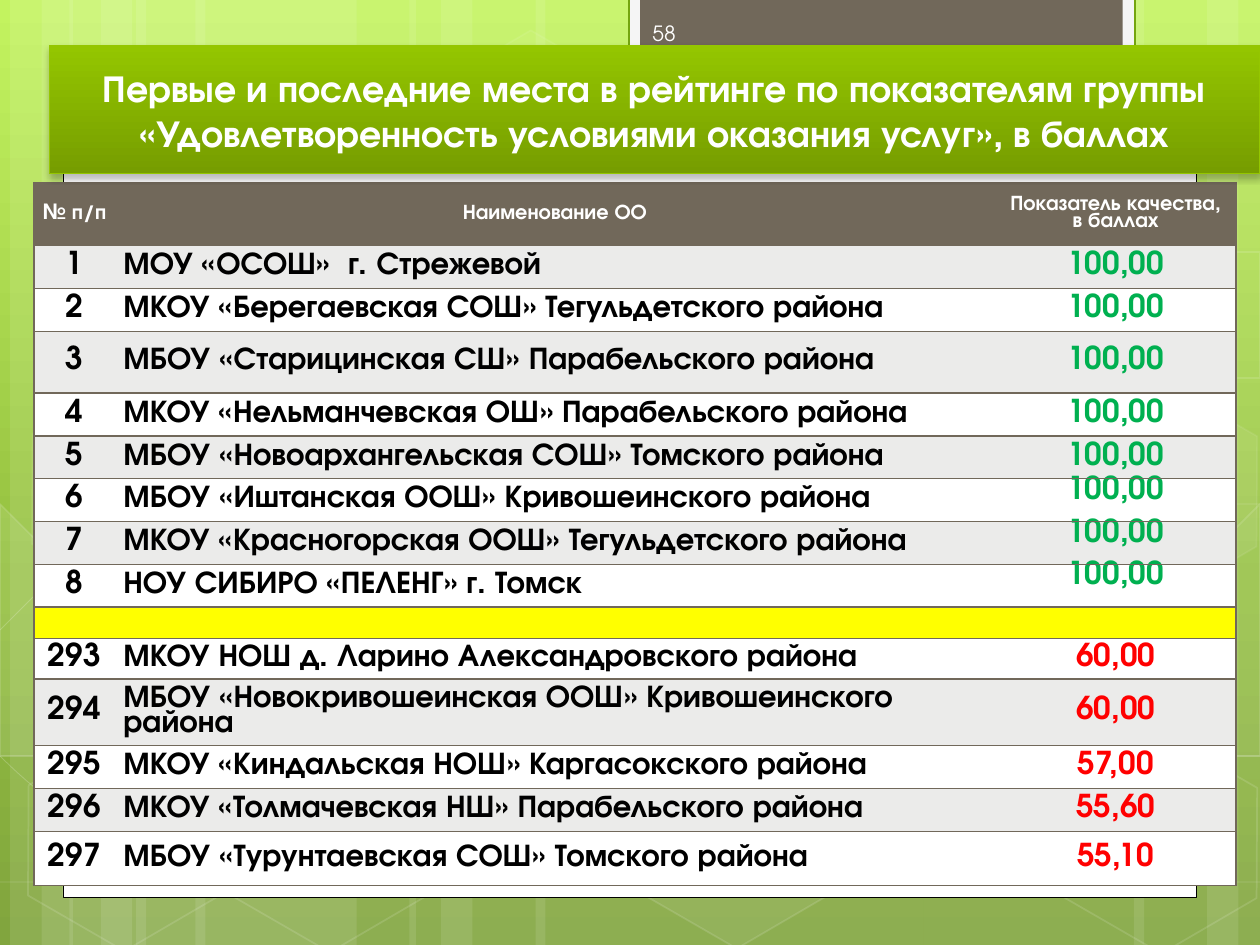
from copy import deepcopy

from lxml.etree import SubElement
from pptx import Presentation
from pptx.dml.color import RGBColor
from pptx.enum.shapes import MSO_SHAPE
from pptx.enum.text import MSO_ANCHOR, MSO_AUTO_SIZE, PP_ALIGN
from pptx.oxml import parse_xml
from pptx.oxml.ns import nsdecls, qn
from pptx.util import Inches, Pt

FONT = "TeX Gyre Adventor"
WHITE = RGBColor(0xFF, 0xFF, 0xFF)
BLACK = RGBColor(0, 0, 0)
BROWN = RGBColor(0x71, 0x68, 0x5A)
BAND = RGBColor(0xEB, 0xEB, 0xEA)
YELLOW = RGBColor(0xFF, 0xFF, 0)
GREEN = RGBColor(0, 0xB0, 0x50)
RED = RGBColor(0xFF, 0, 0)
LIME = RGBColor(0x94, 0xC6, 0)
DARK_LIME = RGBColor(0x76, 0x9D, 0)
TAB_EDGE = RGBColor(0x74, 0xA5, 0x10)
TAB_FILL = RGBColor(0xF5, 0xF5, 0xF5)
NUMBER_COLOR = RGBColor(0xFE, 0xFE, 0xFE)
BACKDROP = [RGBColor(0xC3, 0xF3, 0x5F), RGBColor(0x93, 0xBF, 0x3F), RGBColor(0x81, 0xA5, 0x3E)]


def paint(shape, fill=None, fill_alpha=100, line=None, width=1, line_alpha=100):
    """Set fill and outline, with opacity in percent; None means no paint."""
    shape.shadow.inherit = False
    for paint_format, color, alpha in ((shape.fill, fill, fill_alpha),
                                       (shape.line.fill, line, line_alpha)):
        if color is None:
            paint_format.background()
            continue
        paint_format.solid()
        paint_format.fore_color.rgb = color
        if alpha < 100:
            for srgb in paint_format._xPr.find(qn("a:solidFill")):
                SubElement(srgb, qn("a:alpha"), val=str(alpha * 1000))
    if line is not None:
        shape.line.width = Pt(width)


def add_text(frame, text, size, color, bold=True):
    run = frame.paragraphs[0].add_run()
    run.text = text
    run.font.name = FONT
    run.font.size = Pt(size)
    run.font.bold = bold
    run.font.color.rgb = color


prs = Presentation()
prs.slide_width, prs.slide_height = Inches(10), Inches(7.5)
slide = prs.slides.add_slide(prs.slide_layouts[5])
shapes = slide.shapes

backdrop = slide.background.fill
backdrop.gradient()
backdrop.gradient_angle = 270
stop_list = backdrop.gradient_stops[0]._gs.getparent()
stop_list.insert(1, deepcopy(stop_list[0]))
for stop, color, position in zip(backdrop.gradient_stops, BACKDROP, (0, 0.62, 1)):
    stop.color.rgb = color
    stop.position = position

# Pale vertical stripes
for left, width in [(1.08, 1.75), (0.08, 0.5), (0.33, 0.83), (1.55, 1.75), (0.55, 0.5), (0.8, 0.83),
                    (7.33, 1.75), (9.58, 0.5), (9, 0.83), (4.25, 3.08), (3.25, 0.5), (3.5, 0.83)]:
    stripe = shapes.add_shape(MSO_SHAPE.RECTANGLE, Inches(left), 0, Inches(width), Inches(7.5))
    paint(stripe, WHITE, 10)

# Sweeping lines: a start point, then Bezier segments of two handles and an end
sweeps = [
    [(0.07, 6.73), (0.61, 6.76), (1.15, 6.79), (1.9, 6.78), (2.65, 6.77), (3.58, 6.75), (4.58, 6.65),
     (5.58, 6.55), (7, 6.36), (7.92, 6.17), (8.83, 5.98), (9.77, 5.68), (10.07, 5.51)],
    [(0.07, 4.77), (0.36, 4.61), (0.65, 4.46), (1.21, 4.31), (1.78, 4.16), (2.59, 3.94), (3.47, 3.87),
     (4.36, 3.8), (5.44, 3.79), (6.54, 3.87), (7.64, 3.95), (9.47, 4.26), (10.07, 4.34)],
    [(0.06, 6.17), (1.27, 6.72), (2.47, 7.27), (3.34, 7.49)],
    [(0.07, 5.78), (0.38, 5.89), (0.7, 6), (1.28, 6.16), (1.86, 6.31), (2.73, 6.56), (3.57, 6.73),
     (4.4, 6.9), (5.45, 7.08), (6.28, 7.18), (7.11, 7.29), (8, 7.33), (8.53, 7.36),
     (9.05, 7.4), (9.19, 7.38), (9.45, 7.38), (9.71, 7.37), (9.89, 7.35), (10.07, 7.34)],
    [(2.42, 7.49), (2.6, 7.29), (2.78, 7.09), (3.02, 6.91), (3.26, 6.73), (3.6, 6.53), (3.88, 6.39),
     (4.16, 6.25), (4.33, 6.19), (4.7, 6.09), (5.06, 5.99), (5.73, 5.85), (6.08, 5.78),
     (6.44, 5.71), (6.49, 5.71), (6.8, 5.69), (7.11, 5.66), (7.6, 5.63), (7.94, 5.62),
     (8.29, 5.61), (8.86, 5.62), (8.86, 5.62), (9.08, 5.62), (9.3, 5.62), (9.53, 5.62),
     (9.71, 5.63), (9.88, 5.64), (9.97, 5.65), (10.06, 5.66), (10.03, 5.65), (10.06, 5.66)],
]
for sweep in sweeps:
    builder = shapes.build_freeform(*sweep[0], scale=Inches(1))
    builder.add_line_segments(sweep[1:], close=False)
    curve = builder.convert_to_shape()
    paint(curve, line=WHITE, width=0.5, line_alpha=20)
    # Turn every three straight segments into one Bezier segment
    segments = list(curve._element.iter(qn("a:lnTo")))
    outline = segments[0].getparent()
    for i in range(0, len(segments), 3):
        bezier = SubElement(outline, qn("a:cubicBezTo"))
        for segment in segments[i:i + 3]:
            bezier.append(segment[0])
            outline.remove(segment)

# Hexagons: left, top, fill opacity, line opacity
for left, top, fill_alpha, line_alpha in [
        (3.34, 0.36, 4, 8), (4.97, 5.89, 6, 12), (0.11, 5.91, 0, 12), (0.14, 3.12, 7, 8),
        (1.74, 5.92, 0, 12), (7.53, 4.53, 10, 12), (8.34, 5.93, 0, 12), (8.34, 3.14, 7, 8)]:
    hexagon = shapes.add_shape(MSO_SHAPE.HEXAGON, Inches(left), Inches(top), Inches(1.75), Inches(1.52))
    hexagon.rotation = 30
    hexagon.adjustments[0] = 0.285
    paint(hexagon, WHITE if fill_alpha else None, fill_alpha, WHITE, 1, line_alpha)

# Hexagons cut off by the slide edge
for corners, fill_alpha in [
        ([(0.08, 4.45), (0.19, 4.38), (0.96, 4.82), (0.95, 5.7), (0.2, 6.14), (0.08, 6.07)], 10),
        ([(9.26, 4.85), (10.01, 4.41), (10.09, 4.46), (10.09, 6.13), (10.02, 6.17), (9.26, 5.73)], 4),
        ([(9.26, 2.07), (10.01, 1.63), (10.1, 1.68), (10.09, 3.35), (10.02, 3.39), (9.26, 2.95)], 0)]:
    builder = shapes.build_freeform(*corners[0], scale=Inches(1))
    builder.add_line_segments(corners[1:])
    paint(builder.convert_to_shape(), WHITE if fill_alpha else None, fill_alpha, WHITE, 1, 12)

# White sheet and the page tab above it
for box, fill, line, width in [((0.5, 0.36, 9, 6.76), WHITE, BLACK, 0.5),
                               ((4.99, -0.02, 4.02, 0.76), TAB_FILL, TAB_EDGE, 1.25),
                               ((5.08, -0.02, 3.83, 0.68), BROWN, None, 0)]:
    panel = shapes.add_shape(MSO_SHAPE.RECTANGLE, *map(Inches, box))
    paint(panel, fill, line=line, width=width)

page_number = shapes.add_textbox(Inches(5.08), Inches(0.06), Inches(1.46), Inches(0.4)).text_frame
page_number.word_wrap = True
page_number.vertical_anchor = MSO_ANCHOR.MIDDLE
add_text(page_number, "58", 12, NUMBER_COLOR, bold=False)

# Ranking table
ranking = [
    ("№ п/п", "Наименование ОО", "Показатель качества, в баллах"),
    ("1", "МОУ «ОСОШ»  г. Стрежевой", "100,00"),
    ("2", "МКОУ «Берегаевская СОШ» Тегульдетского района", "100,00"),
    ("3", "МБОУ «Старицинская СШ» Парабельского района", "100,00"),
    ("4", "МКОУ «Нельманчевская ОШ» Парабельского района", "100,00"),
    ("5", "МБОУ «Новоархангельская СОШ» Томского района", "100,00"),
    ("6", "МБОУ «Иштанская ООШ» Кривошеинского района", "100,00"),
    ("7", "МКОУ «Красногорская ООШ» Тегульдетского района", "100,00"),
    ("8", "НОУ СИБИРО «ПЕЛЕНГ» г. Томск", "100,00"),
    ("", "", ""),
    ("293", "МКОУ НОШ д. Ларино Александровского района", "60,00"),
    ("294", "МБОУ «Новокривошеинская ООШ» Кривошеинского района", "60,00"),
    ("295", "МКОУ «Киндальская НОШ» Каргасокского района", "57,00"),
    ("296", "МКОУ «Толмачевская НШ» Парабельского района", "55,60"),
    ("297", "МБОУ «Турунтаевская СОШ» Томского района", "55,10"),
]
GAP_ROW = 9
row_heights = {0: 0.5, 3: 0.49, GAP_ROW: 0.25, 10: 0.32, 11: 0.53, 14: 0.43}
table = shapes.add_table(len(ranking), 3, Inches(0.27), Inches(1.45), Inches(9.54), Inches(5.7)).table
table.first_row = table.horz_banding = False
table._tbl.tblPr.find(qn("a:tableStyleId")).text = "{2D5ABB26-0587-4C30-8999-92F81FD0307C}"
for column, width in zip(table.columns, (0.64, 6.99, 1.91)):
    column.width = Inches(width)

for r, entries in enumerate(ranking):
    table.rows[r].height = Inches(row_heights.get(r, 0.34))
    for c, entry in enumerate(entries):
        cell = table.cell(r, c)
        cell.margin_left = cell.margin_right = Inches(0.07 if r and c else 0.06)
        cell.margin_top = cell.margin_bottom = 0
        cell.vertical_anchor = MSO_ANCHOR.TOP if c == 2 and r in (6, 7, 8) else MSO_ANCHOR.MIDDLE
        cell.fill.solid()
        cell.fill.fore_color.rgb = {0: BROWN, GAP_ROW: YELLOW}.get(r, BAND if r % 2 else WHITE)
        sides = ["L"] * (c == 0) + ["R"] * (c == 2) + ["T", "B"]
        for i, side in enumerate(sides):
            cell._tc.tcPr.insert(i, parse_xml(
                f'<a:ln{side} {nsdecls("a")} w="12700"><a:solidFill>'
                f'<a:srgbClr val="{BROWN}"/></a:solidFill></a:ln{side}>'))
        paragraph = cell.text_frame.paragraphs[0]
        if not entry:
            SubElement(paragraph._p, qn("a:endParaRPr"), sz="1200")
            continue
        cell.text_frame.auto_size = MSO_AUTO_SIZE.NONE
        paragraph.line_spacing = 0.88
        paragraph.alignment = PP_ALIGN.LEFT if r and c == 1 else PP_ALIGN.CENTER
        score_color = GREEN if r < GAP_ROW else RED
        color = WHITE if r == 0 else score_color if c == 2 else BLACK
        add_text(cell.text_frame, entry, 18 if r else 12, color)

# Title banner, in front of everything
title = shapes.title
title.left, title.top, title.width, title.height = map(Inches, (0.39, 0.36, 9.61, 1.02))
title.fill.gradient()
title.fill.gradient_angle = 270
for stop, color, position in zip(title.fill.gradient_stops, (LIME, DARK_LIME), (0, 1)):
    stop.color.rgb = color
    stop.position = position
title.line.color.rgb = LIME
title.line.width = Pt(0.75)
title._element.spPr.append(parse_xml(
    f'<a:effectLst {nsdecls("a")}><a:outerShdw blurRad="50800" dist="25400" dir="5400000">'
    '<a:srgbClr val="000000"><a:alpha val="28000"/></a:srgbClr></a:outerShdw></a:effectLst>'))
title.text_frame.word_wrap = True
title.text_frame.auto_size = MSO_AUTO_SIZE.NONE
title.text_frame.vertical_anchor = MSO_ANCHOR.MIDDLE
title.text_frame.paragraphs[0].alignment = PP_ALIGN.CENTER
add_text(title.text_frame, "Первые и последние места в рейтинге по показателям группы "
         "«Удовлетворенность условиями оказания услуг», в баллах", 21.6, WHITE)
shapes._spTree.append(title._element)

prs.save("out.pptx")
